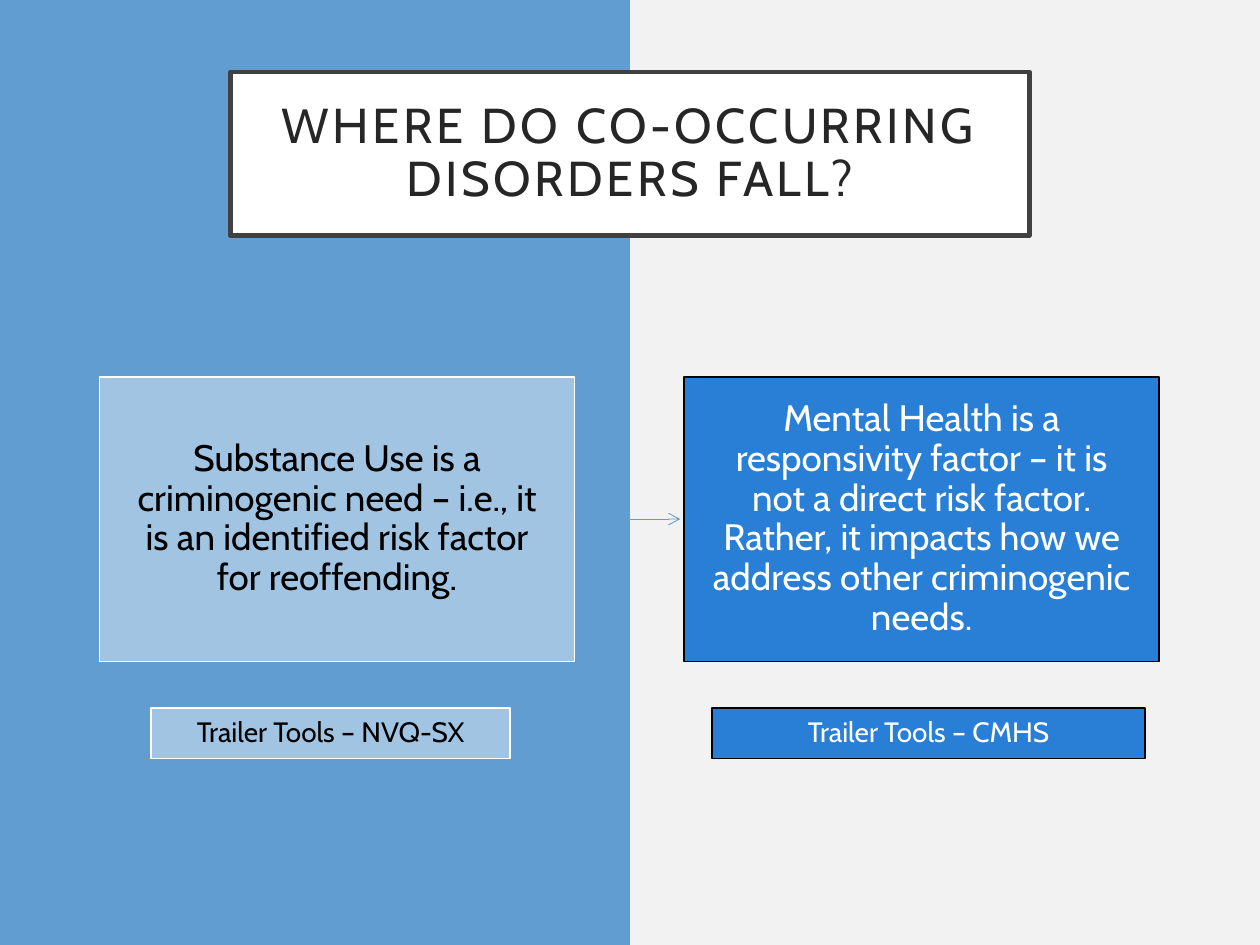
from dataclasses import dataclass

from lxml import etree
from pptx import Presentation
from pptx.dml.color import RGBColor
from pptx.enum import shapes, text
from pptx.oxml.ns import qn
from pptx.util import Inches, Pt


@dataclass(frozen=True)
class Theme:
    font: str = "Cabin"
    background: str = "F2F2F2"
    accent: str = "629DD1"
    white: str = "FFFFFF"
    black: str = "000000"
    title_line: str = "404040"
    title_text: str = "262626"
    light_blue: str = "A1C4E3"
    strong_blue: str = "297FD5"
    title_size: int = 28
    card_size: int = 21
    tool_size: int = 16


THEME = Theme()
NEED_STYLE = (THEME.light_blue, THEME.white, THEME.black)
RESPONSIVITY_STYLE = (THEME.strong_blue, THEME.black, THEME.white)


def rgb(value):
    return RGBColor.from_string(value)


def add_rect(slide, box, fill, line=None, width=1):
    sp = slide.shapes.add_shape(
        shapes.MSO_SHAPE.RECTANGLE, *(Inches(v) for v in box))
    sp.shadow.inherit = False
    sp.fill.solid()
    sp.fill.fore_color.rgb = rgb(fill)
    if line:
        sp.line.color.rgb = rgb(line)
        sp.line.width = Pt(width)
    else:
        sp.line.fill.background()
    return sp


def write(sp, words, size, color, inset_x, inset_y):
    tf = sp.text_frame
    tf.word_wrap = True
    tf.vertical_anchor = text.MSO_ANCHOR.MIDDLE
    tf.margin_left = tf.margin_right = Inches(inset_x)
    tf.margin_top = tf.margin_bottom = Inches(inset_y)
    p = tf.paragraphs[0]
    p.alignment = text.PP_ALIGN.CENTER
    p.line_spacing = 0.9
    p.font.name = THEME.font
    p.font.size = Pt(size)
    p.font.color.rgb = rgb(color)
    r = p.add_run()
    r.text = words
    return r


def add_title(slide, box, words):
    sp = add_rect(slide, box, THEME.white, THEME.title_line, 2.5)
    r = write(sp, words, THEME.title_size, THEME.title_text, 0.2, 0.2)
    r.font._element.set("spc", "200")


def add_card(slide, box, words, style, size, inset_y):
    fill, line, color = style
    sp = add_rect(slide, box, fill, line)
    write(sp, words, size, color, 0.18, inset_y)
    return sp


def add_arrow(slide, card, end_x):
    middle = card.top + card.height // 2
    arrow = slide.shapes.add_connector(
        shapes.MSO_CONNECTOR.STRAIGHT,
        card.left + card.width, middle, Inches(end_x), middle)
    arrow.begin_connect(card, 3)
    arrow.line.color.rgb = rgb(THEME.accent)
    arrow.line.width = Pt(0.5)
    etree.SubElement(arrow.line._get_or_add_ln(), qn("a:tailEnd"), type="arrow")
    etree.SubElement(arrow._element.spPr, qn("a:effectLst"))


def add_factors(slide, box):
    left, top, width, height = box
    card_w = 3.77
    right = left + width - card_w
    need = add_card(
        slide, (left, top, card_w, height),
        "Substance Use is a criminogenic need – i.e., it is an identified "
        "risk factor for reoffending.",
        NEED_STYLE, THEME.card_size, 0.19)
    add_arrow(slide, need, right - 0.03)
    add_card(
        slide, (right, top, card_w, height),
        "Mental Health is a responsivity factor – it is not a direct risk "
        "factor. Rather, it impacts how we address other criminogenic needs.",
        RESPONSIVITY_STYLE, THEME.card_size, 0.19)


def add_tools(slide, box):
    left, top, width, height = box
    need_w, responsivity_w = 2.85, 3.44
    add_card(slide, (left, top, need_w, height), "Trailer Tools – NVQ-SX",
             NEED_STYLE, THEME.tool_size, 0.05)
    add_card(slide, (left + width - responsivity_w, top, responsivity_w, height),
             "Trailer Tools – CMHS", RESPONSIVITY_STYLE, THEME.tool_size, 0.05)


def main():
    prs = Presentation()
    prs.slide_width, prs.slide_height = Inches(10), Inches(7.5)
    slide = prs.slides.add_slide(prs.slide_layouts[6])
    slide.background.fill.solid()
    slide.background.fill.fore_color.rgb = rgb(THEME.background)
    add_rect(slide, (0, 0, 5, 7.5), THEME.accent)
    add_title(slide, (1.83, 0.57, 6.34, 1.3),
              "WHERE DO CO-OCCURRING DISORDERS FALL?")
    add_factors(slide, (0.79, 2.99, 8.41, 2.26))
    add_tools(slide, (1.2, 5.62, 7.89, 0.4))
    prs.save("out.pptx")


if __name__ == "__main__":
    main()
